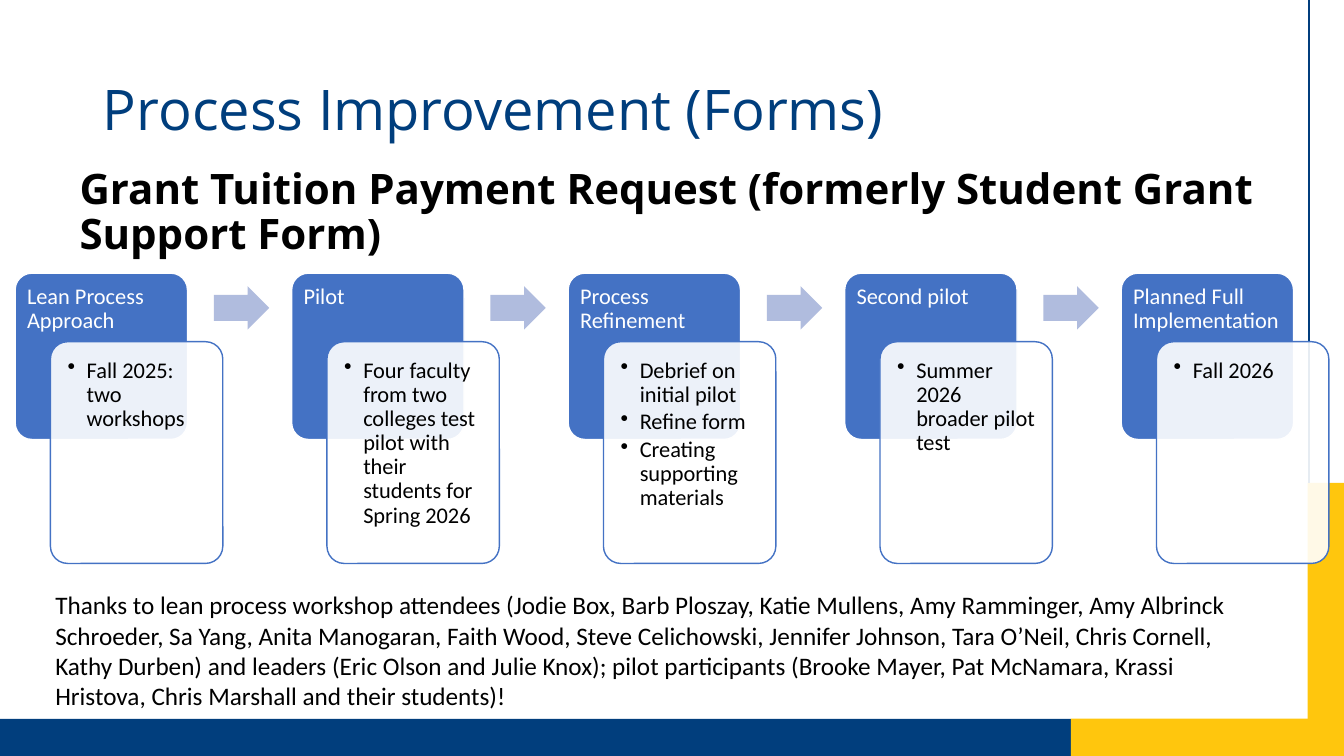
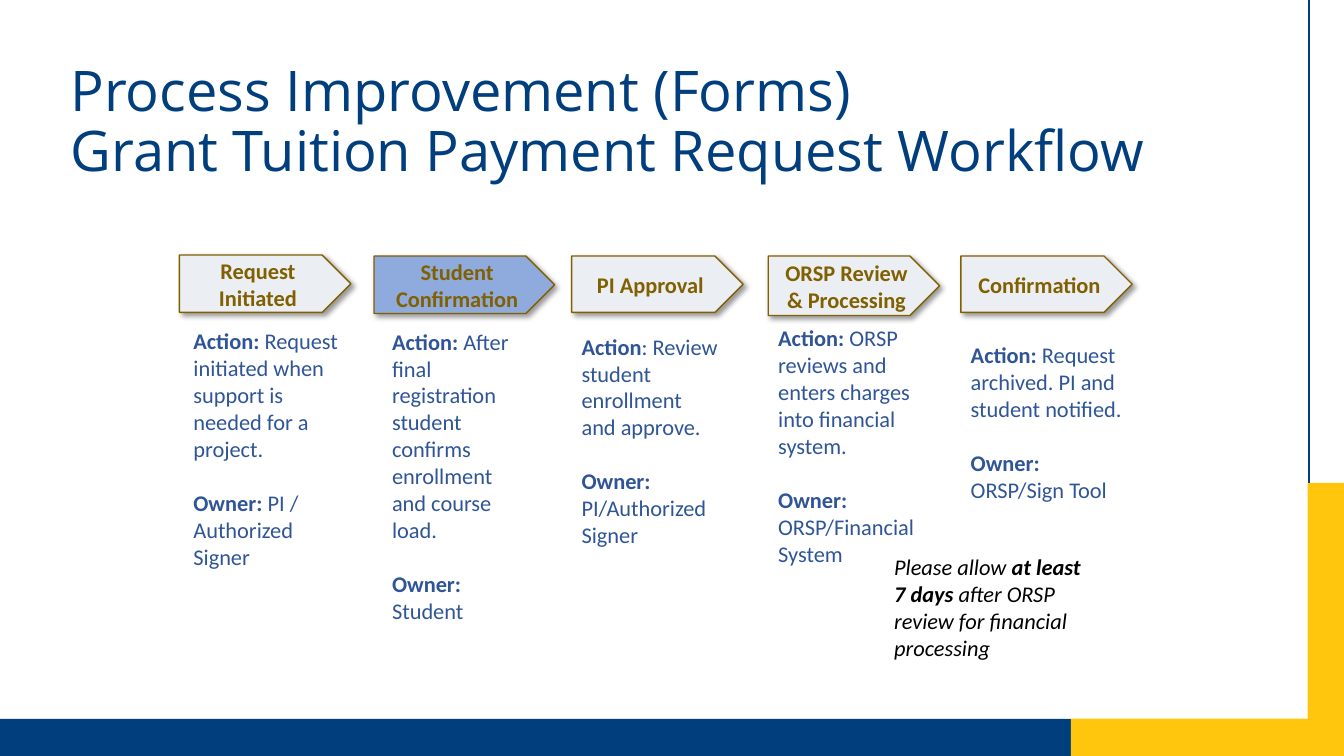
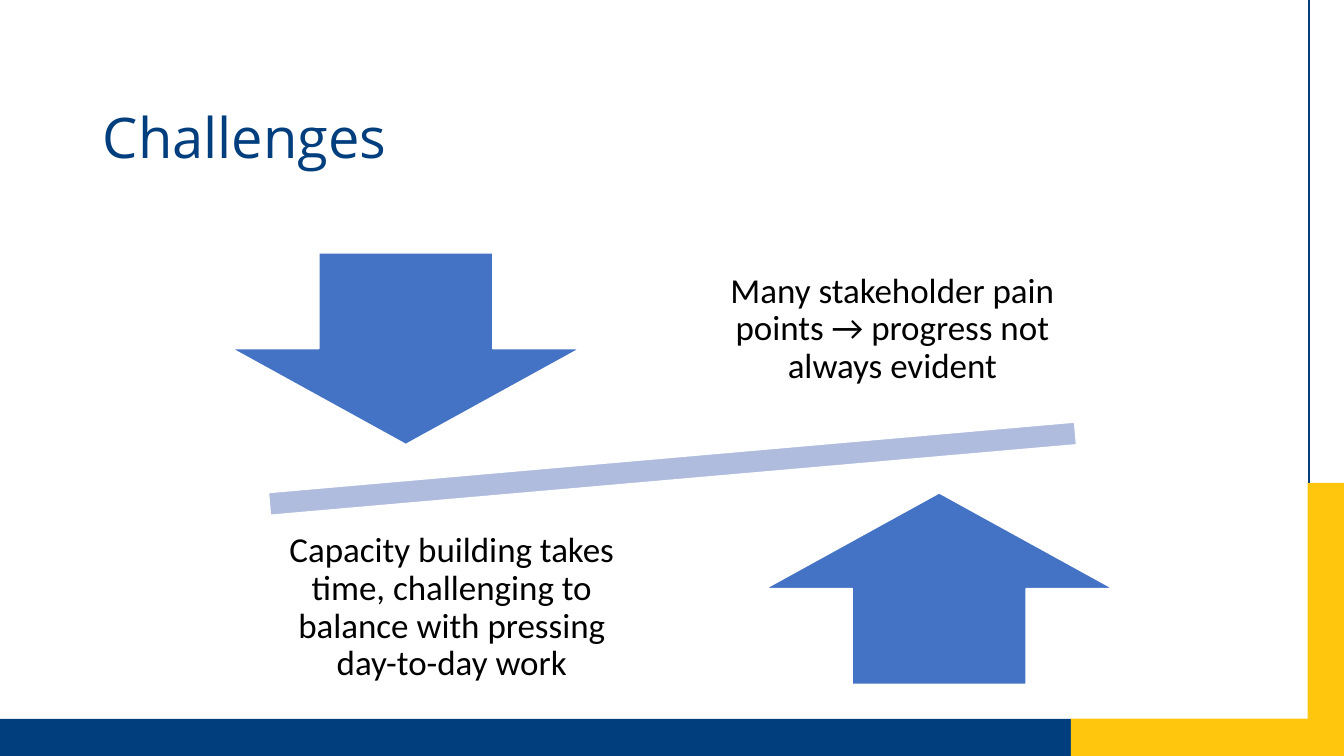
"""Build three slides on grant tuition form improvements and their challenges."""
from lxml import etree
from pptx import Presentation
from pptx.dml.color import RGBColor
from pptx.enum.shapes import MSO_CONNECTOR, MSO_SHAPE as Shape
from pptx.enum.text import MSO_ANCHOR as Anchor, MSO_AUTO_SIZE, PP_ALIGN as Align
from pptx.oxml import parse_xml
from pptx.oxml.ns import nsdecls, qn
from pptx.util import Inches, Pt

rgb = RGBColor.from_string
NAVY, GOLD, WHITE, BLACK = "013E7D", "FFC60D", "FFFFFF", "000000"
BLUE, PALE_BLUE, TITLE_BLUE = "4472C4", "B0BCDE", "003E7D"
BROWN, STEP_BLUE = "806000", "2F5597"


def add_shape(slide, preset, at, fill, line=None, adjustments=()):
    """Add a filled preset shape without a shadow."""
    shape = slide.shapes.add_shape(preset, *map(Inches, at))
    shape.shadow.inherit = False
    shape.fill.solid()
    shape.fill.fore_color.rgb = rgb(fill)
    if line:
        shape.line.color.rgb = rgb(line)
        shape.line.width = Pt(1)
    else:
        shape.line.fill.background()
    for index, value in enumerate(adjustments):
        shape.adjustments[index] = value
    return shape


def write(shape, text, size=16, color=BLACK, font="Calibri", bold=False, italic=False,
          align=Align.LEFT, anchor=Anchor.TOP, insets=(0.1, 0.05, 0.1, 0.05),
          spacing=None, before=0, after=0, bullet=False):
    """Write newline-separated paragraphs, with bold spans between double asterisks."""
    frame = shape.text_frame
    frame.word_wrap = True
    frame.vertical_anchor = anchor
    frame.margin_left, frame.margin_top, frame.margin_right, frame.margin_bottom = map(Inches, insets)
    for index, line in enumerate(text.split("\n")):
        paragraph = frame.add_paragraph() if index else frame.paragraphs[0]
        paragraph.alignment = align
        paragraph.line_spacing = spacing
        paragraph.space_before = Pt(before if index else 0)
        paragraph.space_after = Pt(after)
        if bullet:
            properties = paragraph._p.get_or_add_pPr()
            properties.set("marL", str(Inches(0.19)))
            properties.set("indent", str(-Inches(0.19)))
            etree.SubElement(properties, qn("a:buChar")).set("char", "•")
        for part, words in enumerate(line.split("**")):
            if words:
                run = paragraph.add_run()
                run.text = words
                run.font.size = Pt(size)
                run.font.name = font
                run.font.color.rgb = rgb(color)
                run.font.bold = bold or part % 2 == 1
                run.font.italic = italic


presentation = Presentation()
presentation.slide_width = Inches(13.33)
presentation.slide_height = Inches(7.5)
layout = presentation.slide_layouts[5]

master = presentation.slide_master
master.placeholders[0].text_frame.auto_size = MSO_AUTO_SIZE.NONE
title_style = master.element.xpath(".//p:titleStyle/a:lvl1pPr")[0]
title_style.set("algn", "l")
title_style.insert(0, parse_xml(f'<a:lnSpc {nsdecls("a")}><a:spcPct val="90000"/></a:lnSpc>'))
title_style.replace(title_style.find(qn("a:defRPr")), parse_xml(
    f'<a:defRPr {nsdecls("a")} sz="4000"><a:solidFill><a:srgbClr val="{TITLE_BLUE}"/></a:solidFill>'
    '<a:latin typeface="Open Sans"/></a:defRPr>'))

slides = []
for title, at in [
    ("Process Improvement (Forms)", (0.92, 0.39, 11.5, 1.45)),
    ("Process Improvement (Forms)\vGrant Tuition Payment Request Workflow", (0.6, 0.5, 11.98, 1.45)),
    ("Challenges", (0.92, 0.67, 11.5, 1.45)),
]:
    slide = presentation.slides.add_slide(layout)
    placeholder = slide.shapes.title
    placeholder.left, placeholder.top, placeholder.width, placeholder.height = map(Inches, at)
    placeholder.text_frame.text = title
    slides.append(slide)
timeline, workflow, challenges = slides

frame_parts = [add_shape(timeline, Shape.RECTANGLE, at, fill) for at, fill in [
    ((0, 7.13, 13.33, 0.37), NAVY),
    ((10.62, 4.79, 2.71, 2.71), GOLD),
    ((0, 0, 12.97, 7.13), WHITE),
]]
edge = timeline.shapes.add_connector(
    MSO_CONNECTOR.STRAIGHT, Inches(12.98), 0, Inches(12.98), Inches(4.79))
edge.line.color.rgb = rgb(NAVY)
edge.line.width = Pt(1.5)
etree.SubElement(edge.element.spPr, qn("a:effectLst"))
for index, part in enumerate(frame_parts + [edge]):
    part.element.xpath(".//p:cNvPr")[0].set("id", str(100 + index))
    layout.element.cSld.spTree.insert(2 + index, part.element)

write(timeline.shapes.add_textbox(*map(Inches, (0.69, 1.62, 12.15, 1))),
      "Grant Tuition Payment Request (formerly Student Grant Support Form)",
      size=30, font="Open Sans", bold=True, spacing=0.9)

phases = [
    ("Lean Process Approach", "Fall 2025: two workshops"),
    ("Pilot", "Four faculty from two colleges test pilot with their students for Spring 2026"),
    ("Process Refinement", "Debrief on initial pilot\nRefine form\nCreating supporting materials"),
    ("Second pilot", "Summer 2026 broader pilot test"),
    ("Planned Full Implementation", "Fall 2026"),
]
phase_pitch = (11.12 - 0.15) / (len(phases) - 1)
for index, (name, details) in enumerate(phases):
    left = 0.15 + index * phase_pitch
    header = add_shape(timeline, Shape.ROUNDED_RECTANGLE, (left, 2.71, 1.71, 1.65), BLUE, WHITE, [0.1])
    write(header, name, color=WHITE, insets=(0.07, 0.07, 0.07, 0.07), spacing=0.9)
    card = add_shape(timeline, Shape.ROUNDED_RECTANGLE, (left + 0.35, 3.39, 1.71, 2.2), WHITE, BLUE, [0.1])
    card_color = card.element.spPr.find(qn("a:solidFill"))[0]
    etree.SubElement(card_color, qn("a:alpha")).set("val", "90000")
    write(card, details, insets=(0.12, 0.12, 0.12, 0.12), spacing=0.9, after=2.4, bullet=True)
    if index < len(phases) - 1:
        add_shape(timeline, Shape.RIGHT_ARROW, (left + 1.97, 2.84, 0.55, 0.43), PALE_BLUE,
                  adjustments=[0.6, 0.5])

write(timeline.shapes.add_textbox(*map(Inches, (0.45, 5.8, 12.2, 1.31))),
      "Thanks to lean process workshop attendees (Jodie Box, Barb Ploszay, Katie Mullens, "
      "Amy Ramminger, Amy Albrinck Schroeder, Sa Yang, Anita Manogaran, Faith Wood, "
      "Steve Celichowski, Jennifer Johnson, Tara O’Neil, Chris Cornell, Kathy Durben) and leaders "
      "(Eric Olson and Julie Knox); pilot participants (Brooke Mayer, Pat McNamara, "
      "Krassi Hristova, Chris Marshall and their students)!", size=18)

steps = [
    ("Request Initiated", (1.78, 2.53, 1.7, 0.57), "EBEEF2", (1.82, 3.56, 1.66, 1.78),
     "**Action: **Request initiated when support is needed for a project.\n"
     "**Owner: **PI / Authorized Signer"),
    ("Student Confirmation", (3.71, 2.54, 1.79, 0.57), "8FAADC", (3.79, 3.99, 1.58, 1.46),
     "**Action: **After final registration student confirms enrollment and course load.\n"
     "**Owner: **Student"),
    ("PI Approval", (5.67, 2.54, 1.7, 0.56), "EBEEF2", (5.67, 3.61, 1.56, 1.52),
     "**Action**: Review student enrollment and approve.\n**Owner: **PI/Authorized Signer"),
    ("ORSP Review & Processing", (7.62, 2.54, 1.7, 0.59), "EBEEF2", (7.62, 3.53, 1.71, 1.78),
     "**Action: **ORSP reviews and enters charges into financial system.\n"
     "**Owner: **ORSP/Financial System"),
    ("Confirmation", (9.53, 2.54, 1.7, 0.56), "EBEEF2", (9.53, 3.54, 1.7, 1.29),
     "**Action: **Request archived. PI and student notified.\n**Owner: **ORSP/Sign Tool"),
]
for name, arrow_at, fill, details_at, details in steps:
    arrow = add_shape(workflow, Shape.PENTAGON, arrow_at, fill, BROWN)
    arrow.element.spPr.find(qn("a:effectLst")).append(parse_xml(
        f'<a:outerShdw {nsdecls("a")} blurRad="{Pt(4)}" dist="{Pt(3)}" dir="2700000" algn="tl" '
        f'rotWithShape="0"><a:srgbClr val="{BLACK}"><a:alpha val="40000"/></a:srgbClr></a:outerShdw>'))
    write(arrow, name, color=BROWN, bold=True, align=Align.CENTER, anchor=Anchor.MIDDLE)
    write(workflow.shapes.add_textbox(*map(Inches, details_at)), details,
          color=STEP_BLUE, anchor=Anchor.MIDDLE, before=19.5)

write(workflow.shapes.add_textbox(*map(Inches, (8.77, 5.44, 2.18, 1.18))),
      "Please allow **at least 7 days **after ORSP review for financial processing", italic=True)

beam = add_shape(challenges, Shape.MATH_MINUS, (1.21, 4.17, 10.92, 0.96), PALE_BLUE, WHITE)
beam.rotation = 355
for preset, arrow_at, text_at, text in [
    (Shape.DOWN_ARROW, (2.3, 2.51), (7.01, 2.27),
     "Many stakeholder pain points → progress not always evident"),
    (Shape.UP_ARROW, (7.59, 4.89), (2.64, 5.03),
     "Capacity building takes time, challenging to balance with pressing day-to-day work"),
]:
    add_shape(challenges, preset, (*arrow_at, 3.45, 1.9), BLUE, WHITE)
    write(challenges.shapes.add_textbox(*map(Inches, (*text_at, 3.68, 2))), text, size=25,
          align=Align.CENTER, anchor=Anchor.MIDDLE, insets=(0.19, 0.19, 0.19, 0.19), spacing=0.9)

presentation.save("out.pptx")
